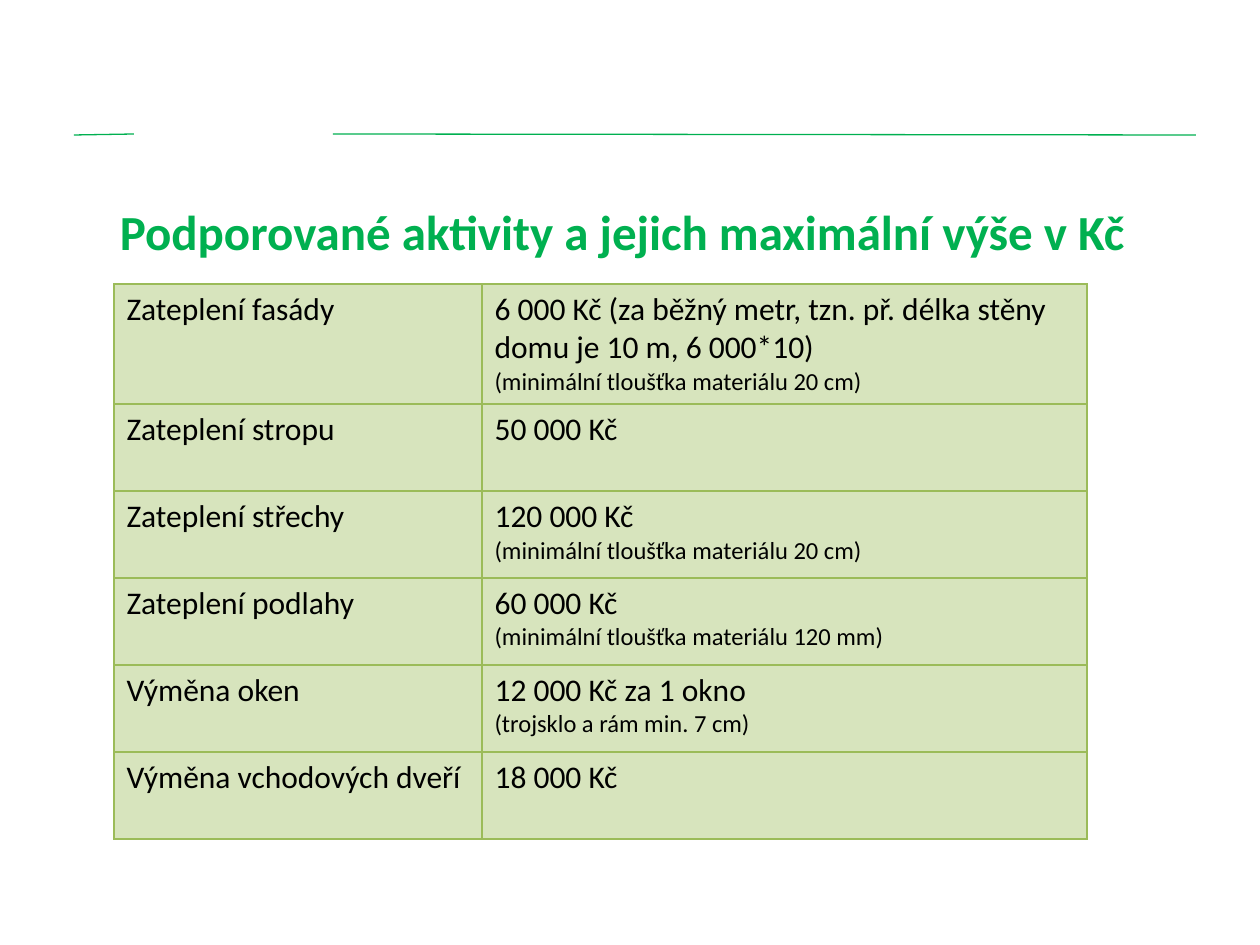
from lxml.etree import SubElement
from pptx import Presentation
from pptx.dml.color import RGBColor
from pptx.enum.shapes import MSO_CONNECTOR
from pptx.enum.text import PP_ALIGN
from pptx.oxml.ns import qn
from pptx.util import Emu, Pt

GREEN = RGBColor(0x00, 0xB0, 0x50)
BORDER_GREEN = RGBColor(0x9B, 0xBB, 0x59)
CELL_GREEN = RGBColor(0xD7, 0xE4, 0xBD)
BLACK = RGBColor(0x00, 0x00, 0x00)

PX_PER_INCH = 126
COLUMN_WIDTHS = (368, 605)
FIRST_ROW_HEIGHT, ROW_HEIGHT = 120, 87

# Activity, maximum amount, condition
ACTIVITIES = [
    ("Zateplení fasády",
     "6 000 Kč (za běžný metr, tzn. př. délka stěny domu je 10 m, 6 000*10)",
     "(minimální tloušťka materiálu 20 cm)"),
    ("Zateplení stropu", "50 000 Kč", None),
    ("Zateplení střechy", "120 000 Kč", "(minimální tloušťka materiálu 20 cm)"),
    ("Zateplení podlahy", "60 000 Kč", "(minimální tloušťka materiálu 120 mm)"),
    ("Výměna oken", "12 000 Kč za 1 okno", "(trojsklo a rám min. 7 cm)"),
    ("Výměna vchodových dveří", "18 000 Kč", None),
]


def px(length):
    return Emu(round(length * 914400 / PX_PER_INCH))


def write(paragraph, text, size=18, color=BLACK, bold=False, align=PP_ALIGN.LEFT):
    paragraph.alignment = align
    run = paragraph.add_run()
    run.text = text
    run.font.name = "Calibri"
    run.font.size = Pt(size)
    run.font.bold = bold
    run.font.color.rgb = color


def add_rule(slide, x1, y1, x2, y2):
    rule = slide.shapes.add_connector(
        MSO_CONNECTOR.STRAIGHT, px(x1), px(y1), px(x2), px(y2))
    rule.line.color.rgb = GREEN
    rule.line.width = Pt(0.75)
    SubElement(rule._element.spPr, qn("a:effectLst"))


def add_title(slide, text):
    title = slide.shapes.add_textbox(px(47), px(195), px(1139), px(72))
    title.text_frame.word_wrap = True
    write(title.text_frame.paragraphs[0], text, size=28, color=GREEN,
          bold=True, align=PP_ALIGN.CENTER)


def style_cell(cell):
    properties = cell._tc.get_or_add_tcPr()
    for side in ("a:lnL", "a:lnR", "a:lnT", "a:lnB"):
        border = SubElement(properties, qn(side), w=str(Pt(1)))
        fill = SubElement(border, qn("a:solidFill"))
        SubElement(fill, qn("a:srgbClr"), val=str(BORDER_GREEN))
    cell.fill.solid()
    cell.fill.fore_color.rgb = CELL_GREEN


def add_activity_table(slide):
    height = FIRST_ROW_HEIGHT + ROW_HEIGHT * (len(ACTIVITIES) - 1)
    table = slide.shapes.add_table(
        len(ACTIVITIES), len(COLUMN_WIDTHS), px(114), px(284),
        px(sum(COLUMN_WIDTHS)), px(height)).table
    for column, width in zip(table.columns, COLUMN_WIDTHS):
        column.width = px(width)
    for index, (activity, amount, condition) in enumerate(ACTIVITIES):
        table.rows[index].height = px(ROW_HEIGHT if index else FIRST_ROW_HEIGHT)
        activity_cell, amount_cell = table.rows[index].cells
        for cell in (activity_cell, amount_cell):
            style_cell(cell)
        write(activity_cell.text_frame.paragraphs[0], activity)
        write(amount_cell.text_frame.paragraphs[0], amount)
        if condition:
            write(amount_cell.text_frame.add_paragraph(), condition, size=14)


def main():
    presentation = Presentation()
    presentation.slide_width = px(1260)
    presentation.slide_height = px(945)
    slide = presentation.slides.add_slide(presentation.slide_layouts[6])

    # Header rule, left and right of the gap
    add_rule(slide, 134, 134, 74, 135)
    add_rule(slide, 1196, 135, 333, 134)

    add_title(slide, " Podporované aktivity a jejich maximální výše v Kč")
    add_activity_table(slide)

    presentation.save("out.pptx")


if __name__ == "__main__":
    main()
